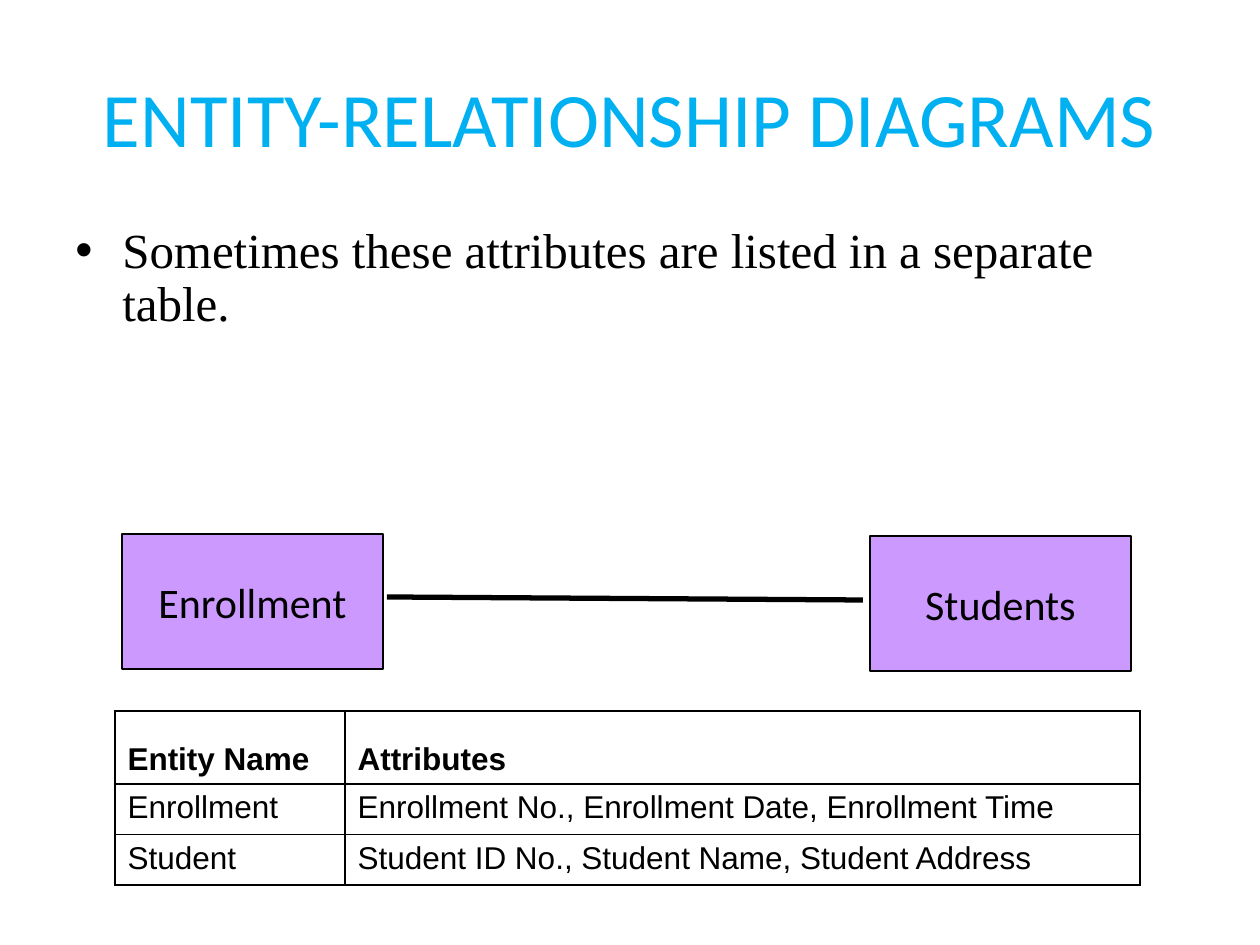
from lxml import etree
from pptx import Presentation
from pptx.dml.color import RGBColor
from pptx.enum.shapes import MSO_CONNECTOR, MSO_SHAPE
from pptx.enum.text import MSO_ANCHOR, PP_ALIGN
from pptx.oxml.ns import qn
from pptx.util import Emu, Pt

RECTANGLE = MSO_SHAPE.RECTANGLE
STRAIGHT = MSO_CONNECTOR.STRAIGHT
CENTER, LEFT = PP_ALIGN.CENTER, PP_ALIGN.LEFT
TOP, MIDDLE, BOTTOM = MSO_ANCHOR.TOP, MSO_ANCHOR.MIDDLE, MSO_ANCHOR.BOTTOM

BLACK = RGBColor(0x00, 0x00, 0x00)
WHITE = RGBColor(0xFF, 0xFF, 0xFF)
SKY_BLUE = RGBColor(0x00, 0xB0, 0xF0)
LILAC = RGBColor(0xCC, 0x99, 0xFF)

EMU_PER_PX = 914400 // 126
ENTITY_SIZE = (261, 135)

ATTRIBUTE_ROWS = [
    ("Entity Name", "Attributes"),
    ("Enrollment", "Enrollment No., Enrollment Date, Enrollment Time"),
    ("Student", "Student ID No., Student Name, Student Address"),
]
COLUMN_WIDTHS = (230, 795)
ROW_HEIGHTS = (73, 49, 45)


def px(*lengths):
    return [Emu(length * EMU_PER_PX) for length in lengths]


def set_text(frame, text, font_name, size, color=BLACK, align=LEFT, bold=False):
    paragraph = frame.paragraphs[0]
    paragraph.text = text
    paragraph.alignment = align
    font = paragraph.font
    font.name, font.size, font.bold = font_name, Pt(size), bold
    font.color.rgb = color
    return paragraph


def add_text(slide, box, text, font_name, size, color=BLACK, align=LEFT, anchor=TOP):
    frame = slide.shapes.add_textbox(*px(*box)).text_frame
    frame.word_wrap = True
    frame.vertical_anchor = anchor
    return set_text(frame, text, font_name, size, color, align)


def make_bullet(paragraph, indent):
    paragraph.line_spacing = 0.9
    paragraph.space_before = Pt(5.6)
    properties = paragraph._p.get_or_add_pPr()
    properties.set("marL", str(indent))
    properties.set("indent", str(-indent))
    etree.SubElement(properties, qn("a:buFont"), typeface="Arial")
    etree.SubElement(properties, qn("a:buChar"), char="•")


def add_entity(slide, left, top, name):
    entity = slide.shapes.add_shape(RECTANGLE, *px(left, top, *ENTITY_SIZE))
    entity.shadow.inherit = False
    entity.fill.solid()
    entity.fill.fore_color.rgb = LILAC
    entity.line.color.rgb = BLACK
    entity.line.width = Pt(0.75)
    frame = entity.text_frame
    frame.word_wrap = False
    frame.vertical_anchor = MIDDLE
    set_text(frame, name, "Calibri", 24, align=CENTER)


def add_relationship(slide, start, end):
    relationship = slide.shapes.add_connector(STRAIGHT, *px(*start, *end))
    relationship.line.color.rgb = BLACK
    relationship.line.width = Pt(3)
    etree.SubElement(relationship._element.spPr, qn("a:effectLst"))


def style_cell(cell):
    properties = cell._tc.get_or_add_tcPr()
    for side in ("lnL", "lnR", "lnT", "lnB"):
        border = etree.SubElement(properties, qn(f"a:{side}"), w=str(Pt(1)))
        border_fill = etree.SubElement(border, qn("a:solidFill"))
        etree.SubElement(border_fill, qn("a:srgbClr"), val=str(BLACK))
    cell.fill.solid()
    cell.fill.fore_color.rgb = WHITE


def add_attribute_table(slide, left, top):
    size = (sum(COLUMN_WIDTHS), sum(ROW_HEIGHTS))
    table = slide.shapes.add_table(
        len(ROW_HEIGHTS), len(COLUMN_WIDTHS), *px(left, top, *size)
    ).table
    for column, width in zip(table.columns, px(*COLUMN_WIDTHS)):
        column.width = width
    for row, height in zip(table.rows, px(*ROW_HEIGHTS)):
        row.height = height
    for r, texts in enumerate(ATTRIBUTE_ROWS):
        is_header = r == 0
        for c, text in enumerate(texts):
            cell = table.cell(r, c)
            cell.vertical_anchor = BOTTOM if is_header else TOP
            style_cell(cell)
            set_text(cell.text_frame, text, "Arial", 18, bold=is_header)


def main():
    presentation = Presentation()
    presentation.slide_width, presentation.slide_height = px(1260, 945)
    slide = presentation.slides.add_slide(presentation.slide_layouts[6])

    # Title and statement
    add_text(slide, (63, 38, 1134, 157), "ENTITY-RELATIONSHIP DIAGRAMS",
             "Calibri", 44, SKY_BLUE, CENTER, MIDDLE)
    statement = add_text(
        slide, (63, 220, 1134, 107),
        "Sometimes these attributes are listed in a separate table.",
        "Times New Roman", 28)
    make_bullet(statement, px(47)[0])

    # Entities and their relationship
    add_entity(slide, 122, 534, "Enrollment")
    add_entity(slide, 870, 536, "Students")
    add_relationship(slide, (387, 597), (863, 600))

    # Attributes of each entity
    add_attribute_table(slide, 115, 711)

    presentation.save("out.pptx")


if __name__ == "__main__":
    main()
